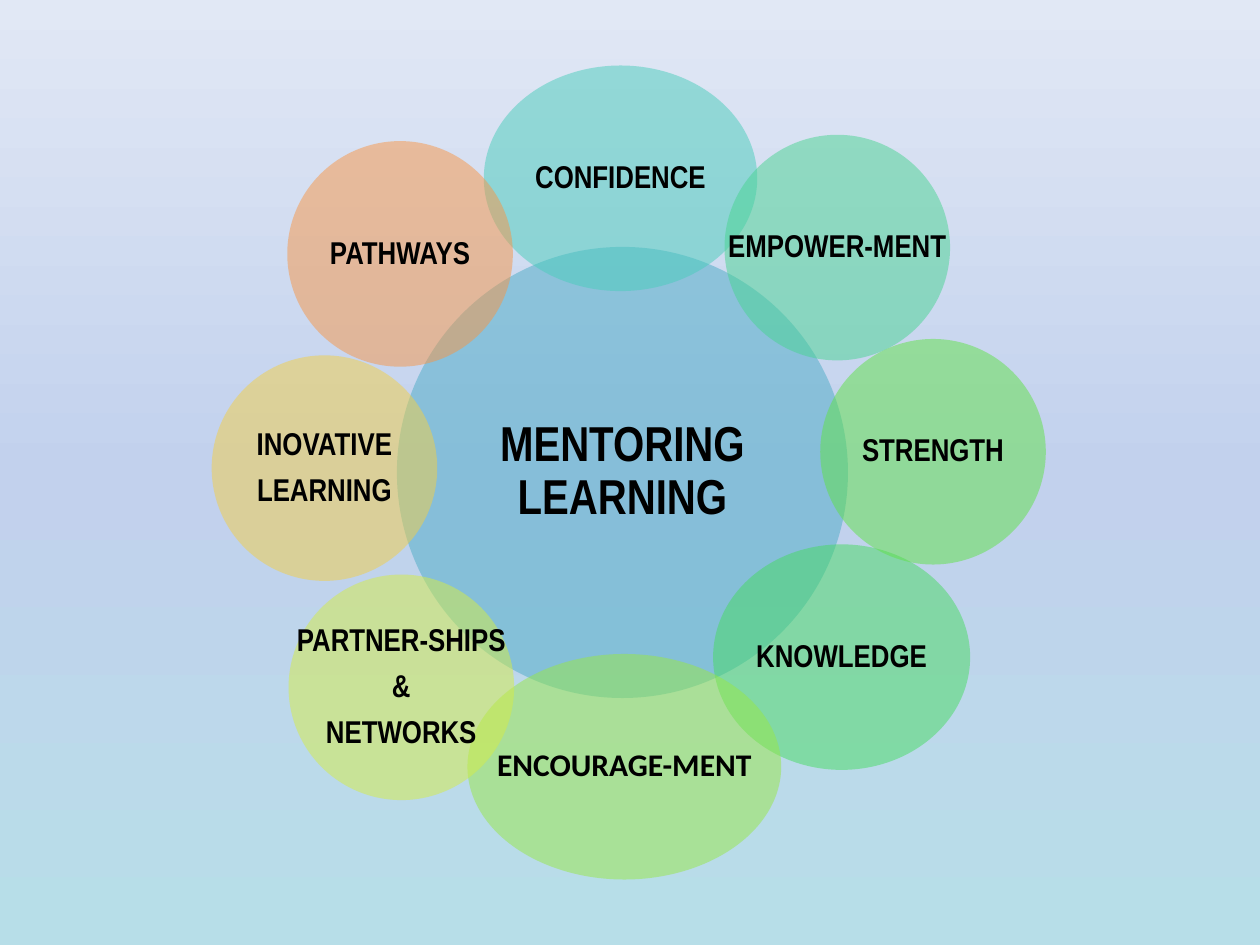
from copy import deepcopy

from lxml.etree import SubElement
from pptx import Presentation
from pptx.dml.color import RGBColor
from pptx.enum.shapes import MSO_SHAPE
from pptx.enum.text import MSO_ANCHOR, PP_ALIGN
from pptx.oxml.ns import qn
from pptx.util import Inches, Pt

BLACK = RGBColor(0x00, 0x00, 0x00)
BLUE = RGBColor(0x4B, 0xAC, 0xC6)
TURQUOISE = RGBColor(0x49, 0xCD, 0xBB)
MINT = RGBColor(0x48, 0xD4, 0x91)
EMERALD = RGBColor(0x47, 0xDA, 0x61)
GREEN = RGBColor(0x60, 0xE1, 0x46)
LIME = RGBColor(0x98, 0xE7, 0x46)
YELLOW_GREEN = RGBColor(0xD5, 0xEC, 0x46)
GOLD = RGBColor(0xF2, 0xCF, 0x46)
ORANGE = RGBColor(0xF7, 0x96, 0x46)
SKY_BOTTOM = RGBColor(0xB7, 0xDE, 0xE8)
SKY_MIDDLE = RGBColor(0xC2, 0xD1, 0xED)
SKY_TOP = RGBColor(0xE1, 0xE8, 0xF5)

NARROW = "Arial Narrow"
HUB_SIZE = 3.58
PETAL_HEIGHT = 1.79

# label lines, left, top, width, colour, font
PETALS = [
    (["CONFIDENCE"], 3.84, 0.52, 2.17, TURQUOISE, NARROW),
    (["EMPOWER-MENT"], 5.75, 1.07, 1.79, MINT, NARROW),
    (["KNOWLEDGE"], 5.66, 4.32, 2.04, EMERALD, NARROW),
    (["STRENGTH"], 6.51, 2.69, 1.79, GREEN, NARROW),
    (["ENCOURAGE-MENT"], 3.71, 5.19, 2.49, LIME, "Calibri"),
    (["PARTNER-SHIPS", "&", "NETWORKS"], 2.29, 4.56, 1.79, YELLOW_GREEN, NARROW),
    (["INOVATIVE", "LEARNING"], 1.68, 2.82, 1.79, GOLD, NARROW),
    (["PATHWAYS"], 2.28, 1.12, 1.79, ORANGE, NARROW),
]


class MentoringSlide:
    def __init__(self, slide, opacity=50):
        self.slide = slide
        self.opacity = opacity

    def gradient_background(self, colors):
        """Spread the colours evenly from the bottom edge to the top."""
        fill = self.slide.background.fill
        fill.gradient()
        fill.gradient_angle = 90
        stop_list = next(self.slide.element.iter(qn("a:gsLst")))
        while len(stop_list) < len(colors):
            stop_list.append(deepcopy(stop_list[-1]))
        for index, (stop, color) in enumerate(zip(fill.gradient_stops, colors)):
            stop.position = index / (len(colors) - 1)
            stop.color.rgb = color

    def bubble(self, lines, left, top, width, height, color,
               font=NARROW, size=18, inset=0.03, wrap=False):
        ellipse = self.slide.shapes.add_shape(
            MSO_SHAPE.OVAL, Inches(left), Inches(top), Inches(width), Inches(height))
        ellipse.shadow.inherit = False
        ellipse.line.fill.background()
        ellipse.fill.solid()
        ellipse.fill.fore_color.rgb = color
        fill_color = ellipse.element.spPr.find(qn("a:solidFill"))[0]
        SubElement(fill_color, qn("a:alpha"), val=str(self.opacity * 1000))

        frame = ellipse.text_frame
        frame.word_wrap = wrap
        frame.vertical_anchor = MSO_ANCHOR.MIDDLE
        frame.margin_left = frame.margin_right = Inches(inset)
        frame.margin_top = frame.margin_bottom = Inches(inset)
        frame.text = "\n".join(lines)
        for paragraph in frame.paragraphs:
            paragraph.alignment = PP_ALIGN.CENTER
            paragraph.line_spacing = 0.9
            paragraph.space_after = Pt(7)
            paragraph.font.name = font
            paragraph.font.size = Pt(size)
            paragraph.font.bold = True
            paragraph.font.color.rgb = BLACK


def main():
    presentation = Presentation()
    presentation.slide_width = Inches(10)
    presentation.slide_height = Inches(7.5)
    blank_layout = presentation.slide_layouts[6]
    flower = MentoringSlide(presentation.slides.add_slide(blank_layout))

    flower.gradient_background([SKY_BOTTOM, SKY_MIDDLE, SKY_TOP])
    flower.bubble(["MENTORING LEARNING"], 3.15, 1.96, HUB_SIZE, HUB_SIZE, BLUE,
                  size=28, inset=0.04, wrap=True)
    for lines, left, top, width, color, font in PETALS:
        flower.bubble(lines, left, top, width, PETAL_HEIGHT, color, font)

    presentation.save("out.pptx")


if __name__ == "__main__":
    main()
